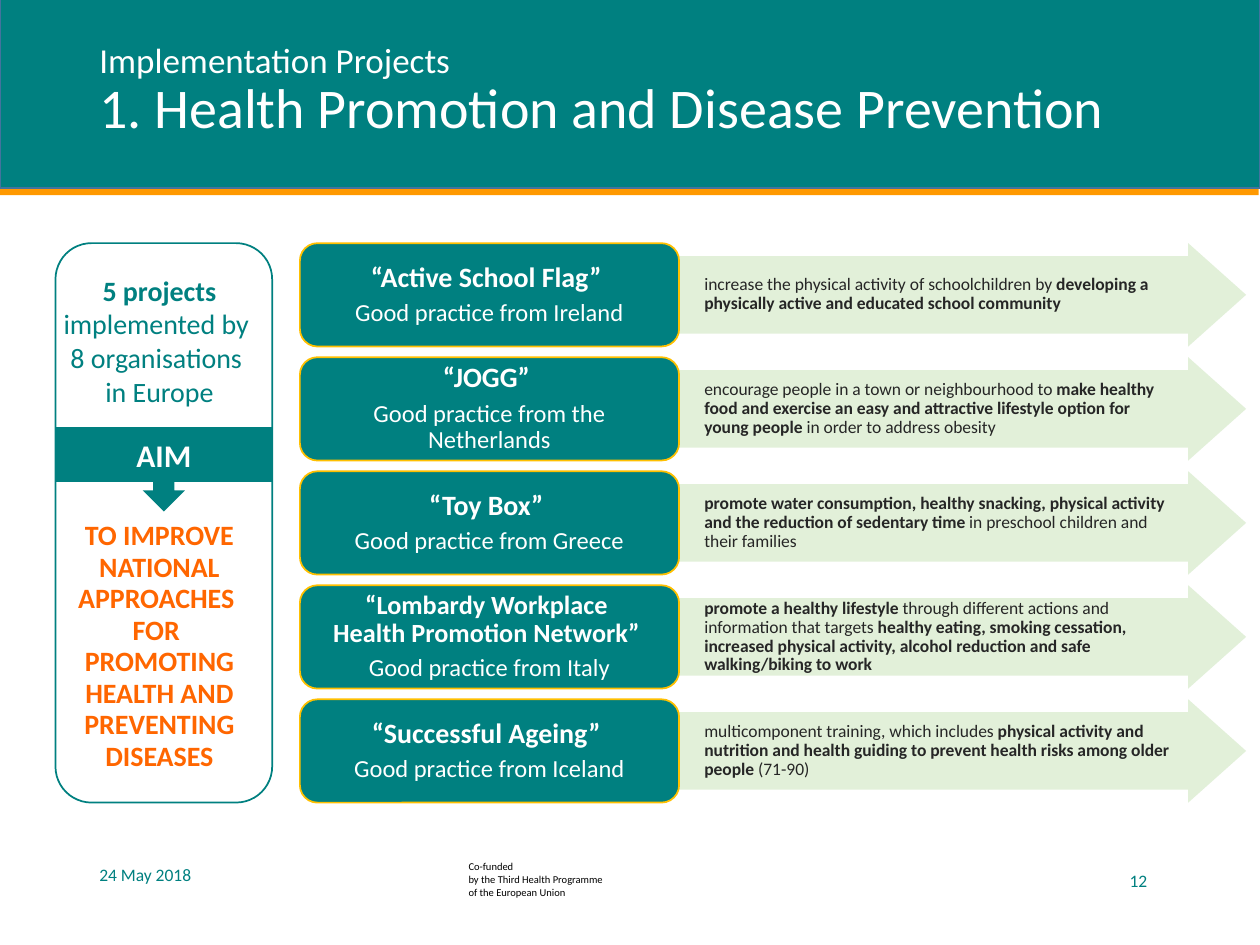
from pptx import Presentation
from pptx.dml.color import RGBColor
from pptx.enum.shapes import MSO_SHAPE
from pptx.enum.text import MSO_ANCHOR, PP_ALIGN
from pptx.util import Inches, Pt

COLS, ROWS = 100, 75
CELL = Inches(10) / COLS
TEAL, WHITE, AMBER = "008080", "FFFFFF", "FFC000"
TOP, PITCH, HIGH = 19.3, 9.05, 8.2

PROJECTS = [
    ("“Active School Flag” ", 16, "Ireland",
     "increase the physical activity of schoolchildren by *developing a "
     "physically active and educated school community"),
    ("“JOGG” ", 16, "the Netherlands",
     "encourage people in a town or neighbourhood to *make healthy food and exercise "
     "an easy and attractive lifestyle option for young people* in order to address obesity"),
    ("“Toy Box” ", 16, "Greece",
     "*promote water consumption, healthy snacking, physical activity and the reduction "
     "of sedentary time* in preschool children and their families"),
    ("“Lombardy Workplace \vHealth Promotion Network” ", 15, "Italy",
     "*promote a healthy lifestyle *through different actions and information that targets "
     "*healthy eating, smoking cessation, increased physical activity, alcohol reduction "
     "and safe walking/biking to work"),
    ("“Successful Ageing” ", 16, "Iceland",
     "multicomponent training, which includes *physical activity and nutrition and health "
     "guiding to prevent health risks among older people *(71-90)"),
]


def paint(code):
    """Turn a hex string into a colour."""
    return RGBColor.from_string(code)


def place(*cells):
    """Turn grid columns and rows into slide lengths."""
    return [round(cell * CELL) for cell in cells]


def style(part, size, color, bold=False):
    """Format all runs of a paragraph."""
    for run in part.runs:
        font = run.font
        font.name, font.size, font.bold = "Calibri", Pt(size), bold
        font.color.rgb = paint(color)


def mark(part, text, size, color):
    """Fill a paragraph whose asterisks switch bold on and off."""
    part.text = ""
    for turn, piece in enumerate(text.split("*")):
        if piece:
            part.add_run().text = piece
            style(part, size, color)
            part.runs[-1].font.bold = None
    bold = text.startswith("*")
    for run in part.runs:
        run.font.bold, bold = bold, not bold


def block(slide, kind, cells, fill=None, line=None, adjust=()):
    """Draw a preset shape and return it."""
    shape = slide.shapes.add_shape(kind, *place(*cells))
    shape.shadow.inherit = False
    for index, value in enumerate(adjust):
        shape.adjustments[index] = value
    if fill:
        shape.fill.solid()
        shape.fill.fore_color.rgb = paint(fill)
    else:
        shape.fill.background()
    if line:
        shape.line.color.rgb = paint(line)
        shape.line.width = Pt(1)
    else:
        shape.line.fill.background()
    return shape


def inset(frame, left, top, right):
    """Set the inner margins of a text frame in grid units."""
    frame.margin_left, frame.margin_right = place(left, right)
    frame.margin_top = frame.margin_bottom = place(top)[0]


def label(slide, cells, text, size, color, align=PP_ALIGN.LEFT,
          anchor=MSO_ANCHOR.MIDDLE, wrap=True):
    """Add a text box and return its frame."""
    frame = slide.shapes.add_textbox(*place(*cells)).text_frame
    frame.word_wrap, frame.vertical_anchor = wrap, anchor
    frame.text = text
    for part in frame.paragraphs:
        part.alignment = align
        style(part, size, color)
    return frame


def header(slide):
    """Draw the title band with its rule and heading."""
    block(slide, MSO_SHAPE.RECTANGLE, (-0.1, 14.9, COLS, 0.6), "FF9900")
    block(slide, MSO_SHAPE.RECTANGLE, (0, -0.2, COLS, 15.1), TEAL, "43739E")
    frame = label(slide, (6.9, 0, 86.2, 14.6), "Implementation Projects \v"
                  "1. Health Promotion and Disease Prevention", 32, WHITE)
    part = frame.paragraphs[0]
    part.line_spacing = 0.9
    part.runs[0].font.size = Pt(20)


def project(slide, row, name, size, land, goal):
    """Draw one project card and the arrow with its goal."""
    top = TOP + row * PITCH
    arrow = block(slide, MSO_SHAPE.RIGHT_ARROW, (53.8, top, 45.1, HIGH),
                  "E2F0D9", adjust=(0.75, 0.56)).text_frame
    inset(arrow, 2.1, 0, 2)
    part = arrow.paragraphs[0]
    mark(part, goal, 10, "262626")
    part.alignment, part.line_spacing = PP_ALIGN.LEFT, 0.9
    card = block(slide, MSO_SHAPE.ROUNDED_RECTANGLE, (23.8, top, 30.1, HIGH),
                 TEAL, AMBER, (0.17,)).text_frame
    inset(card, 0.6, 0.3, 0.6)
    part = card.paragraphs[0]
    part.text = name
    style(part, size, WHITE, True)
    part = card.add_paragraph()
    part.text = f"Good practice from {land}"
    style(part, 14, WHITE)
    for part in card.paragraphs:
        part.alignment, part.line_spacing, part.space_after = PP_ALIGN.CENTER, 0.9, Pt(4)
    for frame in (arrow, card):
        frame.word_wrap, frame.vertical_anchor = True, MSO_ANCHOR.MIDDLE


def aim(slide):
    """Draw the panel that states the aim of the projects."""
    text = ("\nTO IMPROVE NATIONAL APPROACHES \vFOR "
            "\nPROMOTING HEALTH AND PREVENTING DISEASES")
    frame = label(slide, (2.9, 21.2, 19.5, 40.9), text, 16, "FF6600",
                  PP_ALIGN.CENTER, MSO_ANCHOR.TOP)
    first, *rest = frame.paragraphs
    first.text = "5 projects"
    first.add_run().text = " implemented by "
    for line in ("8 organisations ", "in Europe"):
        first.add_line_break()
        first.add_run().text = line
    style(first, 16, TEAL)
    first.runs[0].font.bold = True
    for part in rest:
        style(part, 16, "FF6600", True)
        part.line_spacing = Pt(18)
    rest[0].space_before = Pt(64)
    sign = block(slide, MSO_SHAPE.DOWN_ARROW_CALLOUT, (4.4, 33.9, 17.2, 6.7), TEAL)
    part = sign.text_frame.paragraphs[0]
    part.text, part.alignment = "AIM", PP_ALIGN.CENTER
    style(part, 18, WHITE, True)
    block(slide, MSO_SHAPE.ROUNDED_RECTANGLE,
          (4.4, TOP, 17.2, 4 * PITCH + HIGH), line=TEAL)


def footer(slide):
    """Add the date, the funding note and the slide number."""
    label(slide, (36.2, 67.8, 12.8, 4), "Co-funded\nby the Third Health Programme\n"
          "of the European Union", 6, "000000", anchor=MSO_ANCHOR.TOP, wrap=False)
    label(slide, (6.9, 67.4, 14.8, 4), "24 May 2018", 10, TEAL)
    label(slide, (87.7, 67.9, 5.3, 4), "12", 10, TEAL, PP_ALIGN.CENTER)


def main():
    """Build the slide and save it."""
    deck = Presentation()
    deck.slide_width, deck.slide_height = place(COLS, ROWS)
    slide = deck.slides.add_slide(deck.slide_layouts[6])
    header(slide)
    footer(slide)
    for row, facts in enumerate(PROJECTS):
        project(slide, row, *facts)
    aim(slide)
    deck.save("out.pptx")


if __name__ == "__main__":
    main()
